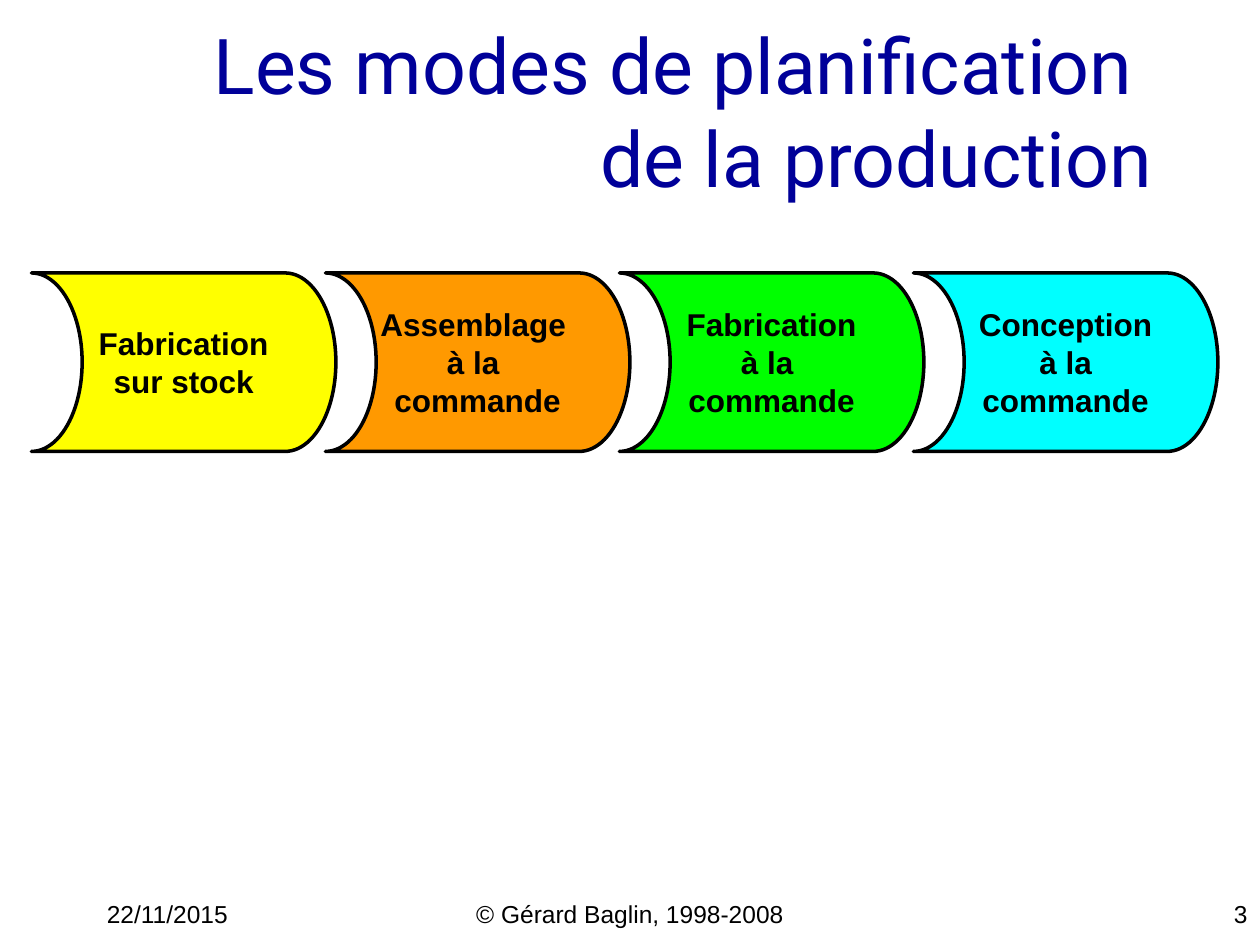
from pptx import Presentation
from pptx.dml.color import RGBColor
from pptx.enum.shapes import MSO_SHAPE
from pptx.enum.text import MSO_ANCHOR, MSO_AUTO_SIZE, PP_ALIGN
from pptx.util import Pt

STORE = MSO_SHAPE.FLOWCHART_STORED_DATA
MIDDLE, TOP = MSO_ANCHOR.MIDDLE, MSO_ANCHOR.TOP
LEFT, CENTER, RIGHT = PP_ALIGN.LEFT, PP_ALIGN.CENTER, PP_ALIGN.RIGHT
NOFIT = MSO_AUTO_SIZE.NONE

TITLE = ["Les modes de planification ", "de la production"]
MODES = [
    (["Fabrication", "sur stock"], "yellow"),
    (["Assemblage ", "à la ", "commande"], "orange"),
    (["Fabrication", "à la ", "commande"], "green"),
    (["Conception", "à la", "commande"], "cyan"),
]
FOOTER = [
    ("22/11/2015", 90, 250, LEFT),
    ("© Gérard Baglin, 1998-2008", 410, 380, CENTER),
    ("3", 950, 250, RIGHT),
]

THEME = {
    "ink": "000000", "title": "000099",
    "yellow": "FFFF00", "orange": "FF9900", "green": "00FF00", "cyan": "00FFFF",
    "head": ("Roboto", 44, False, "title"),
    "mode": ("Arial", 18, True, "ink"),
    "foot": ("Arial", 14, False, "ink"),
}
SCALE = 914400 // 120
WIDTH, HEIGHT = 1200, 900
START, STEP = 30, 280


def px(*sizes):
    return [size * SCALE for size in sizes]


def color(name):
    return RGBColor.from_string(THEME[name])


def add_run(para, text, style):
    face, size, bold, ink = THEME[style]
    run = para.add_run()
    run.text = text
    run.font.name, run.font.size, run.font.bold = face, Pt(size), bold
    run.font.color.rgb = color(ink)


def set_frame(frame, anchor, wrap):
    frame.auto_size = NOFIT
    frame.vertical_anchor = anchor
    frame.word_wrap = wrap


def add_title(slide):
    title = slide.shapes.title
    title.left, title.top, title.width, title.height = px(90, 30, 1020, 150)
    set_frame(title.text_frame, MIDDLE, True)
    para = title.text_frame.paragraphs[0]
    para.alignment = RIGHT
    for index, line in enumerate(TITLE):
        if index:
            para.add_line_break()
        add_run(para, line, "head")


def add_mode(slide, index, lines, fill):
    shape = slide.shapes.add_shape(STORE, *px(START + index * STEP, 260, 290, 170))
    shape._element.spPr.xfrm.set("flipH", "1")
    shape.shadow.inherit = False
    shape.fill.solid()
    shape.fill.fore_color.rgb = color(fill)
    shape.line.color.rgb = color("ink")
    shape.line.width = Pt(2)
    frame = shape.text_frame
    set_frame(frame, MIDDLE, False)
    for row, line in enumerate(lines):
        para = frame.add_paragraph() if row else frame.paragraphs[0]
        para.alignment = CENTER
        add_run(para, line, "mode")


def add_foot(slide, text, left, width, align):
    frame = slide.shapes.add_textbox(*px(left, 850, width, 30)).text_frame
    set_frame(frame, TOP, True)
    para = frame.paragraphs[0]
    para.alignment = align
    add_run(para, text, "foot")


def main():
    deck = Presentation()
    deck.slide_width, deck.slide_height = px(WIDTH, HEIGHT)
    slide = deck.slides.add_slide(deck.slide_layouts[5])
    add_title(slide)
    for index, (lines, fill) in reversed(list(enumerate(MODES))):
        add_mode(slide, index, lines, fill)
    for item in FOOTER:
        add_foot(slide, *item)
    deck.save("out.pptx")


if __name__ == "__main__":
    main()
